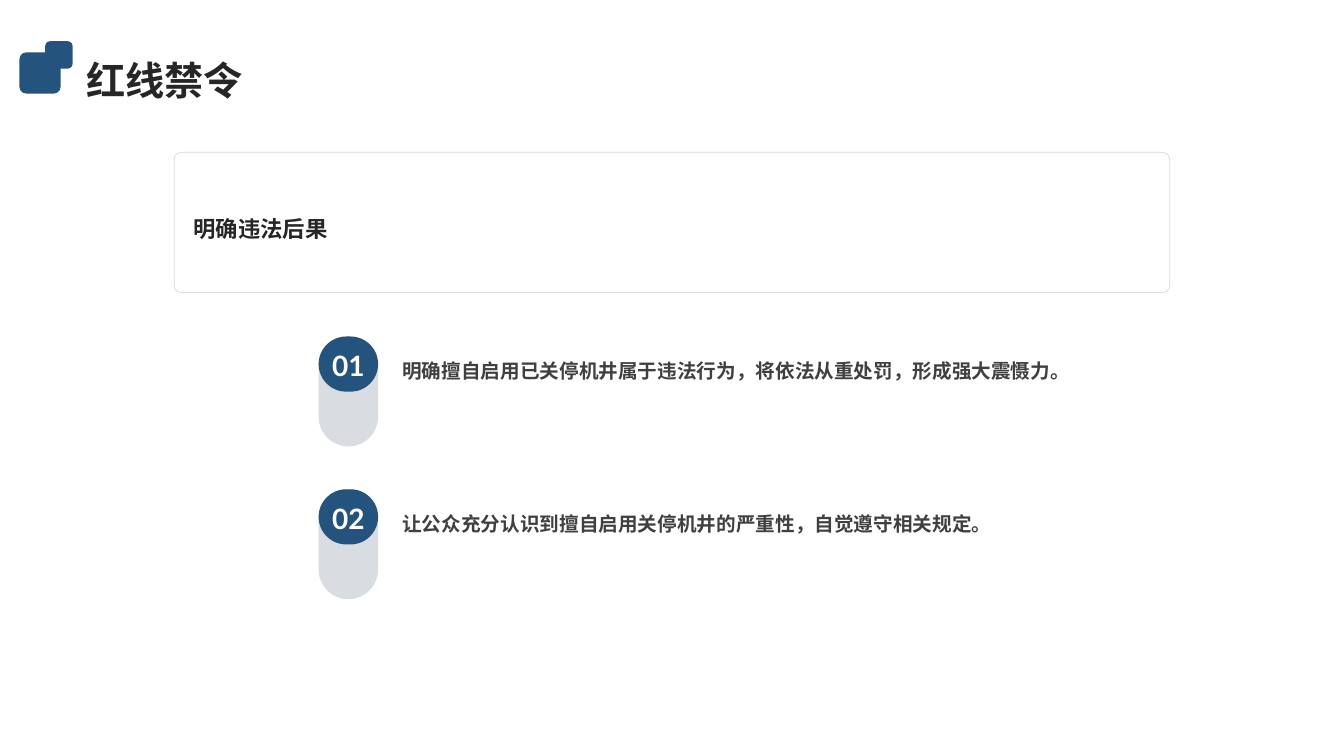
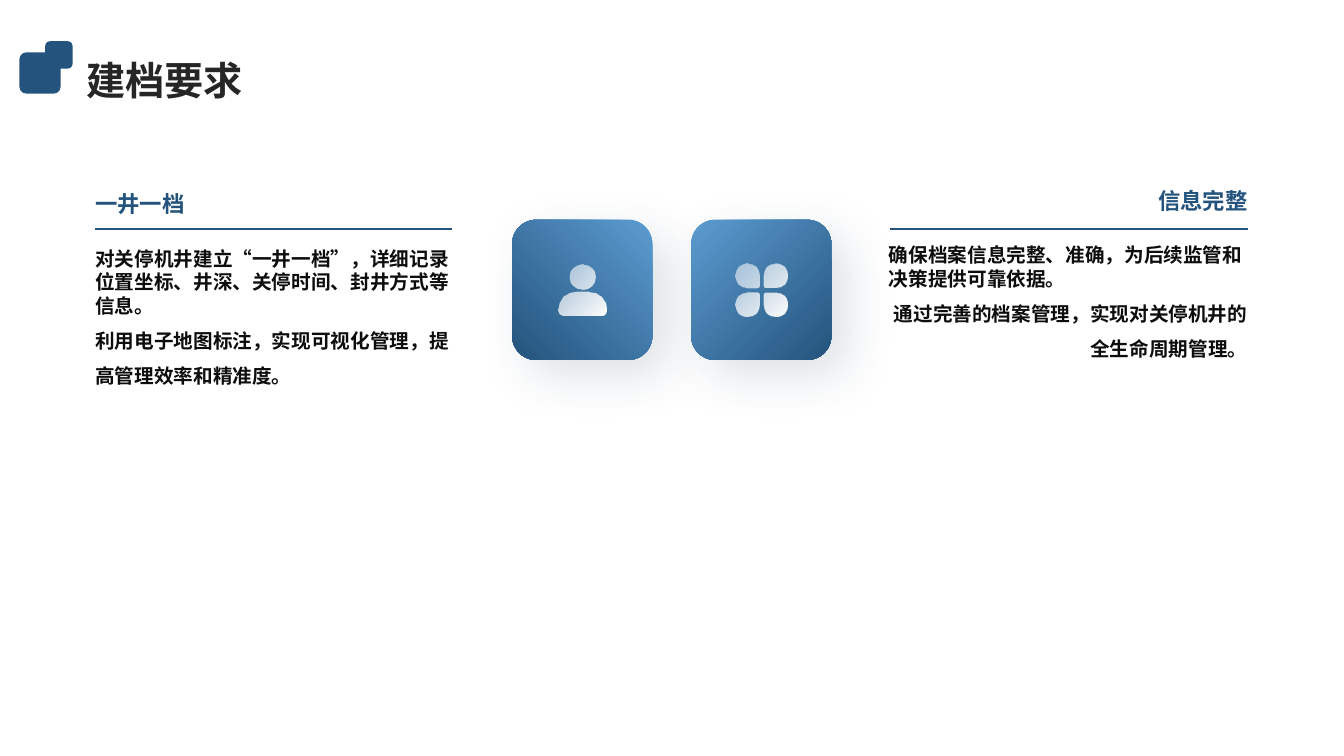
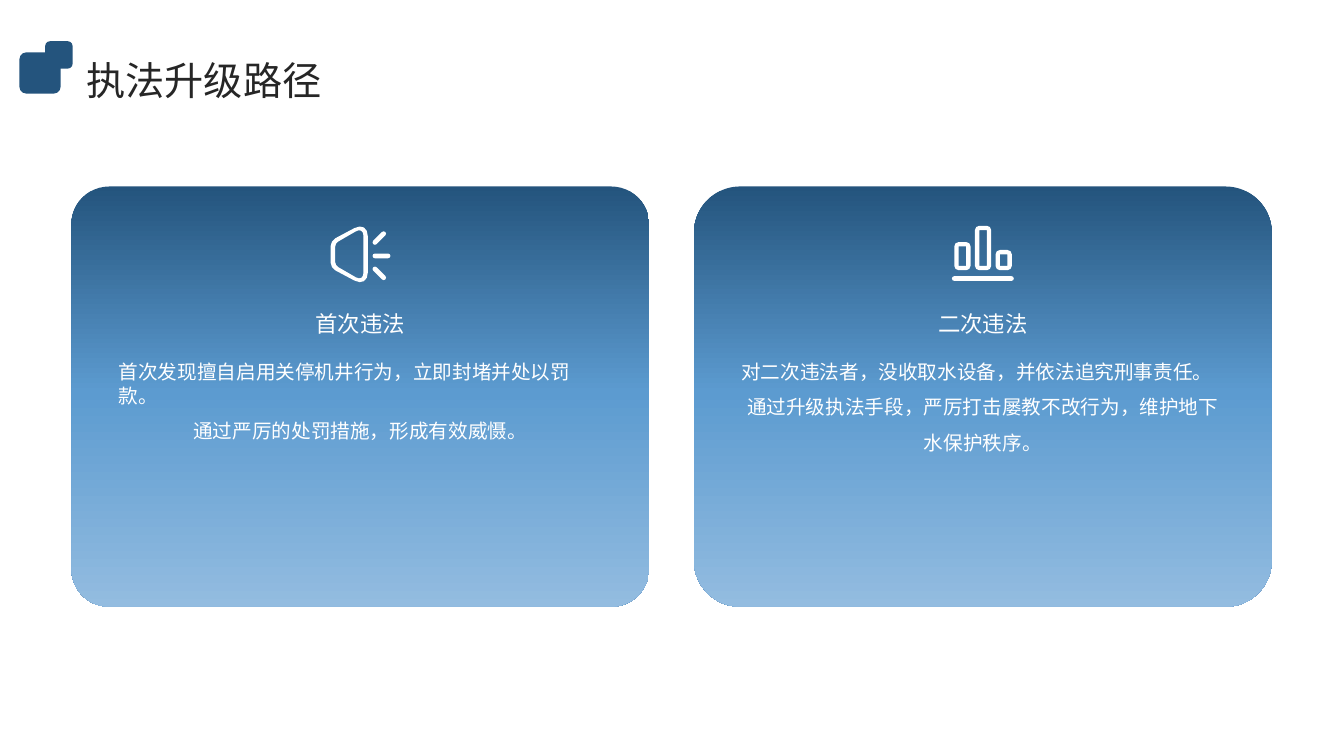
from dataclasses import dataclass, replace
from math import hypot

from lxml.etree import SubElement
from pptx import Presentation
from pptx.dml.color import RGBColor
from pptx.enum.shapes import MSO_CONNECTOR, MSO_SHAPE
from pptx.enum.text import MSO_ANCHOR, MSO_AUTO_SIZE, PP_ALIGN
from pptx.oxml.ns import qn
from pptx.shapes.autoshape import Shape
from pptx.slide import Slide
from pptx.util import Cm, Pt

COLOURS = {
    "navy": "24547D", "blue": "5C9BD0", "sky": "93BCE0", "slate": "44546A",
    "shadow": "1B3F5E", "white": "FFFFFF", "border": "D9D9D9", "paper": "FAFAFA",
    "title": "262626", "item": "404040", "body": "0D0D0D",
}
CJK_FONT = "Noto Sans CJK SC"
SLIDE_WIDTH, SLIDE_HEIGHT = 33.87, 19.05
TWO_CONTENT, COMPARISON = 3, 4
ARC_HANDLE = 0.5523


@dataclass(frozen=True)
class Frame:
    """Position and size in centimetres."""
    left: float
    top: float
    width: float
    height: float


@dataclass(frozen=True)
class Style:
    size: float
    colour: str
    bold: bool = True
    font: str = CJK_FONT
    spacing: float = 1.0
    align: PP_ALIGN = PP_ALIGN.LEFT
    anchor: MSO_ANCHOR = MSO_ANCHOR.TOP
    inset_x: float = 0
    inset_y: float = 0
    wrap: bool = True
    hanging: bool = True


@dataclass(frozen=True)
class Stop:
    position: int
    colour: str
    opacity: int = 100


@dataclass(frozen=True)
class Corner:
    """A polygon corner and the length its rounding takes off each edge."""
    x: float
    y: float
    cut: float


@dataclass(frozen=True)
class Topic:
    heading: str
    lines: tuple[str, str]


Outline = list[Corner]

TITLE = Style(28, "title", spacing=1.1, anchor=MSO_ANCHOR.MIDDLE)
CARD_STOPS = (Stop(0, "navy"), Stop(49, "blue"), Stop(100, "sky"))
TILE_STOPS = (Stop(0, "blue"), Stop(100, "navy"))
ICON_STOPS = (Stop(0, "white"), Stop(100, "white", 50))


# Text
def write(shape: Shape, lines: tuple[str, ...], *styles: Style) -> None:
    """Write one paragraph per line; the first style also sets the frame."""
    frame, first = shape.text_frame, styles[0]
    frame.text = "\n".join(lines)
    frame.auto_size = MSO_AUTO_SIZE.NONE
    frame.word_wrap = first.wrap
    frame.vertical_anchor = first.anchor
    frame.margin_left = frame.margin_right = Cm(first.inset_x)
    frame.margin_top = frame.margin_bottom = Cm(first.inset_y)
    for para, style in zip(frame.paragraphs, styles):
        properties = para._p.get_or_add_pPr()
        properties.set("marL", "0")
        properties.set("indent", "0")
        properties.set("hangingPunct", str(int(style.hanging)))
        SubElement(properties, qn("a:buNone"))
        para.alignment = style.align
        para.line_spacing = style.spacing
        para.space_before = para.space_after = Pt(0)
        for span in para.runs:
            span.font.name = style.font
            span.font.size = Pt(style.size)
            span.font.bold = style.bold
            span.font.color.rgb = RGBColor.from_string(COLOURS[style.colour])
            SubElement(span._r.get_or_add_rPr(), qn("a:ea"), typeface=style.font)


def lengths(frame: Frame) -> tuple[Cm, Cm, Cm, Cm]:
    return Cm(frame.left), Cm(frame.top), Cm(frame.width), Cm(frame.height)


def fill_placeholder(page: Slide, index: int, frame: Frame,
                     lines: tuple[str, ...], *styles: Style) -> None:
    box = page.placeholders[index]
    box.left, box.top, box.width, box.height = lengths(frame)
    write(box, lines, *styles)


# Fills and shapes
def add_colour(parent, colour: str, opacity: int) -> None:
    element = SubElement(parent, qn("a:srgbClr"), val=COLOURS[colour])
    if opacity < 100:
        SubElement(element, qn("a:alpha"), val=str(opacity * 1000))


def paint(shape: Shape, colour: str, opacity: int = 100) -> None:
    shape.shadow.inherit = False
    shape.line.fill.background()
    shape.fill.solid()
    shape.fill.fore_color.rgb = RGBColor.from_string(COLOURS[colour])
    if opacity < 100:
        solid = shape._element.spPr.find(qn("a:solidFill"))
        solid.remove(solid[0])
        add_colour(solid, colour, opacity)


def paint_gradient(shape: Shape, stops: tuple[Stop, ...], angle: int) -> None:
    paint(shape, stops[0].colour)
    solid = shape._element.spPr.find(qn("a:solidFill"))
    gradient = solid.makeelement(qn("a:gradFill"), {"rotWithShape": "1"})
    stop_list = SubElement(gradient, qn("a:gsLst"))
    for stop in stops:
        element = SubElement(stop_list, qn("a:gs"), pos=str(stop.position * 1000))
        add_colour(element, stop.colour, stop.opacity)
    SubElement(gradient, qn("a:lin"), ang=str(angle * 60000), scaled="0")
    shape._element.spPr.replace(solid, gradient)


def add_soft_shadow(shape: Shape) -> None:
    effects = shape._element.spPr.find(qn("a:effectLst"))
    shadow = SubElement(effects, qn("a:outerShdw"), blurRad=str(Pt(35)),
                        dist=str(Pt(16)), dir=str(45 * 60000),
                        algn="ctr", rotWithShape="0")
    add_colour(shadow, "shadow", 15)


def add_rounded(page: Slide, frame: Frame, rounding: float = 0.17) -> Shape:
    shape = page.shapes.add_shape(MSO_SHAPE.ROUNDED_RECTANGLE, *lengths(frame))
    shape.adjustments[0] = rounding
    return shape


def send_back(page: Slide, shape: Shape, level: int) -> None:
    """Move a shape behind the placeholders; level 0 is the rearmost."""
    page.shapes._spTree.insert(2 + level, shape._element)


def add_rule(page: Slide, left: float, top: float, width: float) -> None:
    rule = page.shapes.add_connector(
        MSO_CONNECTOR.STRAIGHT, Cm(left), Cm(top), Cm(left + width), Cm(top))
    rule.line.color.rgb = RGBColor.from_string(COLOURS["navy"])
    rule.line.width = Pt(1.5)
    SubElement(rule._element.spPr, qn("a:effectLst"))


# Icon outlines, in centimetres around the icon's centre
def rounded_points(outline: Outline) -> list[tuple[float, float]]:
    points = []
    for number, corner in enumerate(outline):
        if not corner.cut:
            points.append((corner.x, corner.y))
            continue
        ends = []
        for other in (outline[number - 1], outline[(number + 1) % len(outline)]):
            share = corner.cut / hypot(other.x - corner.x, other.y - corner.y)
            ends.append((corner.x + share * (other.x - corner.x),
                         corner.y + share * (other.y - corner.y)))
        steps = 4 if corner.cut > 0.2 else 2
        for step in range(steps + 1):
            t = step / steps
            start, end = (1 - t) ** 3, t ** 3
            handle_in, handle_out = 3 * t * (1 - t) ** 2, 3 * t ** 2 * (1 - t)
            weight_start = start + handle_in * (1 - ARC_HANDLE)
            weight_end = end + handle_out * (1 - ARC_HANDLE)
            weight_corner = (handle_in + handle_out) * ARC_HANDLE
            points.append(tuple(
                weight_start * a + weight_corner * c + weight_end * b
                for a, c, b in zip(ends[0], (corner.x, corner.y), ends[1])))
    return points


def add_icon(page: Slide, x: float, y: float, outlines: list[Outline]) -> Shape:
    builder = None
    for outline in outlines:
        points = [(Cm(x + dx), Cm(y + dy)) for dx, dy in rounded_points(outline)]
        if builder is None:
            builder = page.shapes.build_freeform(*points[0])
        else:
            builder.move_to(*points[0])
        builder.add_line_segments(points[1:], close=True)
    return builder.convert_to_shape()


def box_outline(left: float, top: float, right: float, bottom: float,
                top_cut: float, bottom_cut: float) -> Outline:
    return [Corner(left, top, top_cut), Corner(right, top, top_cut),
            Corner(right, bottom, bottom_cut), Corner(left, bottom, bottom_cut)]


def stroke_outline(x1: float, y1: float, x2: float, y2: float) -> Outline:
    """A straight stroke with round ends."""
    half = 0.06
    length = hypot(x2 - x1, y2 - y1)
    ux, uy = half * (x2 - x1) / length, half * (y2 - y1) / length
    return [Corner(x1 - ux + uy, y1 - uy - ux, half),
            Corner(x2 + ux + uy, y2 + uy - ux, half),
            Corner(x2 + ux - uy, y2 + uy + ux, half),
            Corner(x1 - ux - uy, y1 - uy + ux, half)]


def person_icon() -> list[Outline]:
    return [box_outline(-0.32, -0.64, 0.32, -0.01, 0.31, 0.31),
            box_outline(-0.6, 0.04, 0.6, 0.65, 0.45, 0.13)]


def clover_icon() -> list[Outline]:
    near, far, round_cut, inner_cut = 0.05, 0.66, 0.3, 0.06
    return [[Corner(sx * near, sy * near, inner_cut),
             Corner(sx * far, sy * near, round_cut),
             Corner(sx * far, sy * far, round_cut),
             Corner(sx * near, sy * far, round_cut)]
            for sx in (-1, 1) for sy in (-1, 1)]


def horn_outline(left: float, left_half: float, left_cut: float,
                 right: float, right_half: float, right_cut: float) -> Outline:
    return [Corner(left, -left_half, left_cut), Corner(right, -right_half, right_cut),
            Corner(right, right_half, right_cut), Corner(left, left_half, left_cut)]


def speaker_icon() -> list[Outline]:
    return [horn_outline(-0.75, 0.34, 0.14, 0.19, 0.84, 0.38),
            horn_outline(-0.63, 0.28, 0.08, 0.08, 0.69, 0.22),
            stroke_outline(0.37, 0.04, 0.7, 0.04),
            stroke_outline(0.37, -0.3, 0.59, -0.52),
            stroke_outline(0.37, 0.37, 0.59, 0.59)]


def bars_icon() -> list[Outline]:
    width, pitch, bottom, wall = 0.41, 0.52, 0.4, 0.11
    outlines = [stroke_outline(-0.72, 0.61, 0.72, 0.61)]
    for number, top in enumerate((-0.31, -0.72, -0.11)):
        left = -0.72 + number * pitch
        outlines.append(box_outline(left, top, left + width, bottom, 0.11, 0.11))
        outlines.append(box_outline(left + wall, top + wall, left + width - wall,
                                    bottom - wall, 0, 0))
    return outlines


# Shared page frame
def add_page(deck, layout: int, title: str, bold: bool = True) -> Slide:
    page = deck.slides.add_slide(deck.slide_layouts[layout])
    backdrop = page.shapes.add_shape(
        MSO_SHAPE.RECTANGLE, *lengths(Frame(0, 0, SLIDE_WIDTH, SLIDE_HEIGHT)))
    paint(backdrop, "white")
    send_back(page, backdrop, 0)
    fill_placeholder(page, 0, Frame(2.18, 1.3, 29.64, 1.3), (title,),
                     replace(TITLE, bold=bold))
    for frame in (Frame(0.49, 1.32, 1.04, 1.04), Frame(1.14, 1.04, 0.69, 0.69)):
        paint(add_rounded(page, frame), "navy")
    return page


# Pages
def build_red_line_page(deck) -> None:
    page = add_page(deck, TWO_CONTENT, "红线禁令")
    panel = add_rounded(page, Frame(4.39, 3.84, 25.09, 3.53), 0.05)
    paint(panel, "white")
    panel.line.color.rgb = RGBColor.from_string(COLOURS["border"])
    panel.line.width = Pt(0.5)
    heading = page.shapes.add_textbox(*lengths(Frame(4.88, 4.17, 24.13, 2.92)))
    write(heading, ("明确违法后果",),
          Style(16, "title", spacing=1.4, anchor=MSO_ANCHOR.MIDDLE))

    number_style = Style(20, "white", font="Lato", spacing=1.1,
                         align=PP_ALIGN.CENTER, anchor=MSO_ANCHOR.MIDDLE,
                         inset_x=0.3, inset_y=0.3, wrap=False)
    item_style = Style(14, "item", spacing=1.5, inset_x=0.3, inset_y=0.3)
    items = ("明确擅自启用已关停机井属于违法行为，将依法从重处罚，形成强大震慑力。",
             "让公众充分认识到擅自启用关停机井的严重性，自觉遵守相关规定。")
    for number, item in enumerate(items, start=1):
        top = 8.48 + (number - 1) * 3.85
        paint(add_rounded(page, Frame(8.03, top, 1.5, 2.77), 0.5), "slate", 20)
        badge = add_rounded(page, Frame(8.03, top, 1.5, 1.39), 0.5)
        paint(badge, "navy")
        write(badge, (f"{number:02}",), number_style)
        fill_placeholder(page, number, Frame(9.84, top - 0.02, 17, 2.92),
                         (item,), item_style)


def build_records_page(deck) -> None:
    page = add_page(deck, COMPARISON, "建档要求")
    topics = (
        Topic("一井一档", ("对关停机井建立“一井一档”，详细记录位置坐标、井深、关停时间、封井方式等信息。",
                       "利用电子地图标注，实现可视化管理，提高管理效率和精准度。")),
        Topic("信息完整", ("确保档案信息完整、准确，为后续监管和决策提供可靠依据。",
                       "通过完善的档案管理，实现对关停机井的全生命周期管理。")),
    )
    aligns = (PP_ALIGN.LEFT, PP_ALIGN.RIGHT)
    icons = (person_icon(), clover_icon())
    body = Style(14, "body")
    for column, (topic, align, icon) in enumerate(zip(topics, aligns, icons)):
        left, lift = 2.4 + column * 20, column * 0.09
        fill_placeholder(page, 1 + 2 * column, Frame(left, 4.8 - lift, 9.04, 0.76),
                         (topic.heading,), Style(16, "navy", align=align))
        fill_placeholder(page, 2 + 2 * column, Frame(left, 6.21 - lift, 9.04, 10.8),
                         topic.lines, body, replace(body, spacing=1.5, align=align))
        add_rule(page, left + column * 0.04, 5.76, 9)

        tile_left, tile_size = 12.91 + column * 4.51, 3.53
        tile = add_rounded(page, Frame(tile_left, 5.54, tile_size, tile_size))
        paint_gradient(tile, TILE_STOPS, 135 - column * 90)
        add_soft_shadow(tile)
        paint_gradient(add_icon(page, tile_left + tile_size / 2, 7.31, icon),
                       ICON_STOPS, 225)


def build_enforcement_page(deck) -> None:
    page = add_page(deck, COMPARISON, "执法升级路径", bold=False)
    topics = (
        Topic("首次违法", ("首次发现擅自启用关停机井行为，立即封堵并处以罚款。",
                       "通过严厉的处罚措施，形成有效威慑。")),
        Topic("二次违法", ("对二次违法者，没收取水设备，并依法追究刑事责任。",
                       "通过升级执法手段，严厉打击屡教不改行为，维护地下水保护秩序。")),
    )
    icons = (speaker_icon(), bars_icon())
    body = Style(14, "white", bold=False, inset_x=0.25, inset_y=0.13, hanging=False)
    heading = replace(body, size=16, spacing=1.1, align=PP_ALIGN.CENTER)
    closing = replace(body, spacing=1.5, align=PP_ALIGN.CENTER, hanging=True)
    for column, (topic, icon) in enumerate(zip(topics, icons)):
        left, width = 1.8 + column * 15.69, 14.56
        card = add_rounded(page, Frame(left, 4.7, width, 10.59), 0.09 + column * 0.02)
        paint_gradient(card, CARD_STOPS, 90)
        send_back(page, card, 1 + column)
        fill_placeholder(page, 1 + 2 * column, Frame(left + 0.94, 7.62, 12.68, 1.02),
                         (topic.heading,), heading)
        fill_placeholder(page, 2 + 2 * column, Frame(left + 0.94, 8.94, 12.68, 5.82),
                         topic.lines, body, closing)
        paint(add_icon(page, left + width / 2, 6.41, icon), "white")


def main() -> None:
    deck = Presentation()
    deck.slide_width, deck.slide_height = Cm(SLIDE_WIDTH), Cm(SLIDE_HEIGHT)
    background = deck.slide_master.background.fill
    background.solid()
    background.fore_color.rgb = RGBColor.from_string(COLOURS["paper"])
    build_red_line_page(deck)
    build_records_page(deck)
    build_enforcement_page(deck)
    deck.save("out.pptx")


if __name__ == "__main__":
    main()
